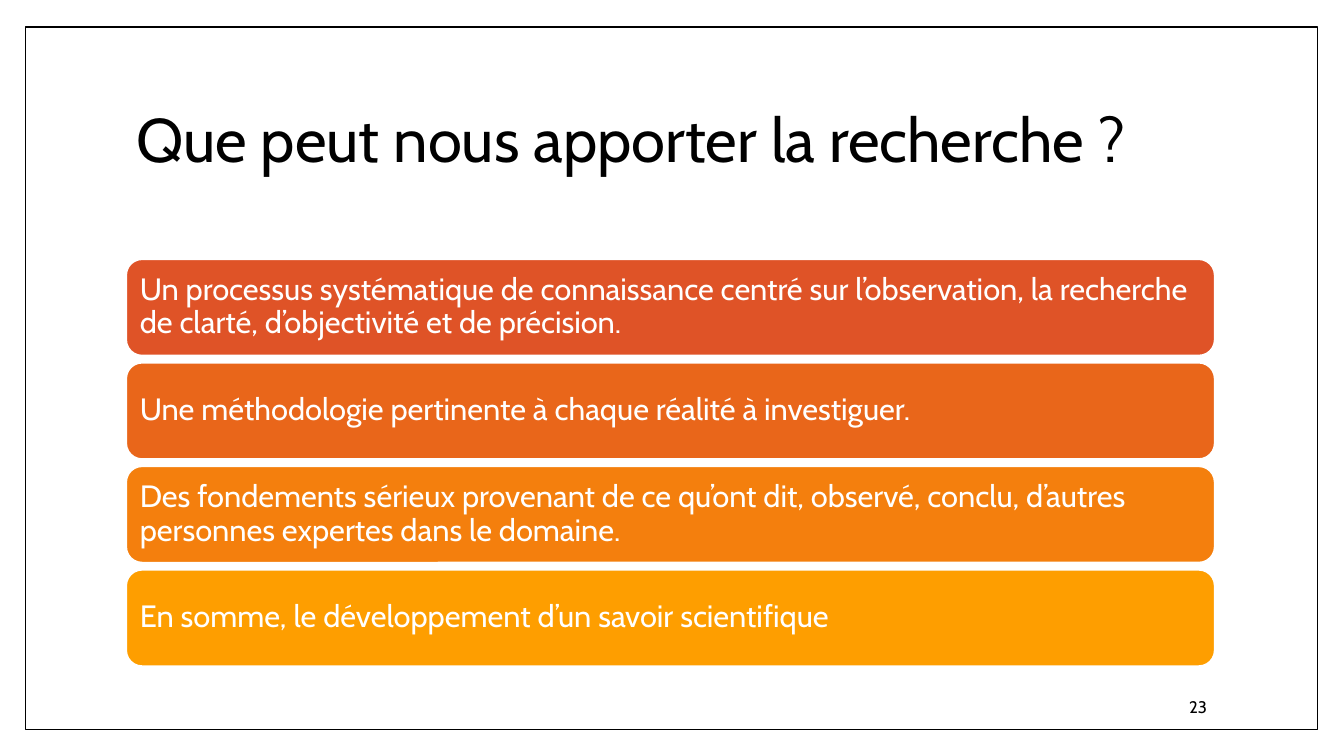
from dataclasses import dataclass
from pptx import Presentation
from pptx.dml.color import RGBColor
from pptx.enum.shapes import MSO_SHAPE
from pptx.enum.text import MSO_ANCHOR, PP_ALIGN
from pptx.util import Inches, Pt


@dataclass(frozen=True)
class Theme:
    font: str = "Cabin"
    black: str = "000000"
    white: str = "FFFFFF"
    bars: tuple = ("DF5327", "E9661A", "F47F0D", "FE9E00")
    title_size: int = 44
    bar_size: int = 22
    number_size: int = 12


theme = Theme()


def add_text(tf, text, size, color, align=PP_ALIGN.LEFT, spacing=0.9):
    tf.word_wrap = True
    tf.vertical_anchor = MSO_ANCHOR.MIDDLE
    p = tf.paragraphs[0]
    p.alignment = align
    p.line_spacing = spacing
    r = p.add_run()
    r.text = text
    r.font.name = theme.font
    r.font.size = Pt(size)
    r.font.color.rgb = RGBColor.from_string(color)


def add_box(kind, left, top, width, height, fill, line, line_width):
    sp = s.shapes.add_shape(kind, Inches(left), Inches(top), Inches(width), Inches(height))
    sp.shadow.inherit = False
    sp.fill.solid()
    sp.fill.fore_color.rgb = RGBColor.from_string(fill)
    sp.line.color.rgb = RGBColor.from_string(line)
    sp.line.width = Pt(line_width)
    return sp


prs = Presentation()
prs.slide_width = Inches(13.33)
prs.slide_height = Inches(7.5)
s = prs.slides.add_slide(prs.slide_layouts[5])

# Page frame, sent behind the title
frame = add_box(MSO_SHAPE.RECTANGLE, 0.25, 0.27, 12.82, 6.97, theme.white, theme.black, 1)
s.shapes.element.insert(2, frame.element)

# Title
title = s.shapes.title
title.left, title.top = Inches(1.25), Inches(0.67)
title.width, title.height = Inches(10.8), Inches(1.48)
add_text(title.text_frame, "Que peut nous apporter la recherche ?", theme.title_size, theme.black)

# Slide number
number = s.shapes.add_textbox(Inches(10.2), Inches(6.81), Inches(1.87), Inches(0.4))
add_text(number.text_frame, "23", theme.number_size, theme.black, PP_ALIGN.RIGHT, 1.0)

# Stacked bars, one per contribution of research
contributions = [
    "Un processus systématique de connaissance centré sur l’observation, la recherche de clarté, d’objectivité et de précision.",
    "Une méthodologie pertinente à chaque réalité à investiguer.",
    "Des fondements sérieux provenant de ce qu’ont dit, observé, conclu, d’autres personnes expertes dans le domaine.",
    "En somme, le développement d’un savoir scientifique",
]
bar_top, bar_pitch = 2.57, 1.027
for i, (text, color) in enumerate(zip(contributions, theme.bars)):
    bar = add_box(MSO_SHAPE.ROUNDED_RECTANGLE, 1.25, bar_top + i * bar_pitch, 10.8, 0.96,
                  color, theme.white, 1.5)
    tf = bar.text_frame
    tf.margin_left = tf.margin_right = tf.margin_top = tf.margin_bottom = Inches(0.09)
    add_text(tf, text, theme.bar_size, theme.white)

prs.save("out.pptx")
